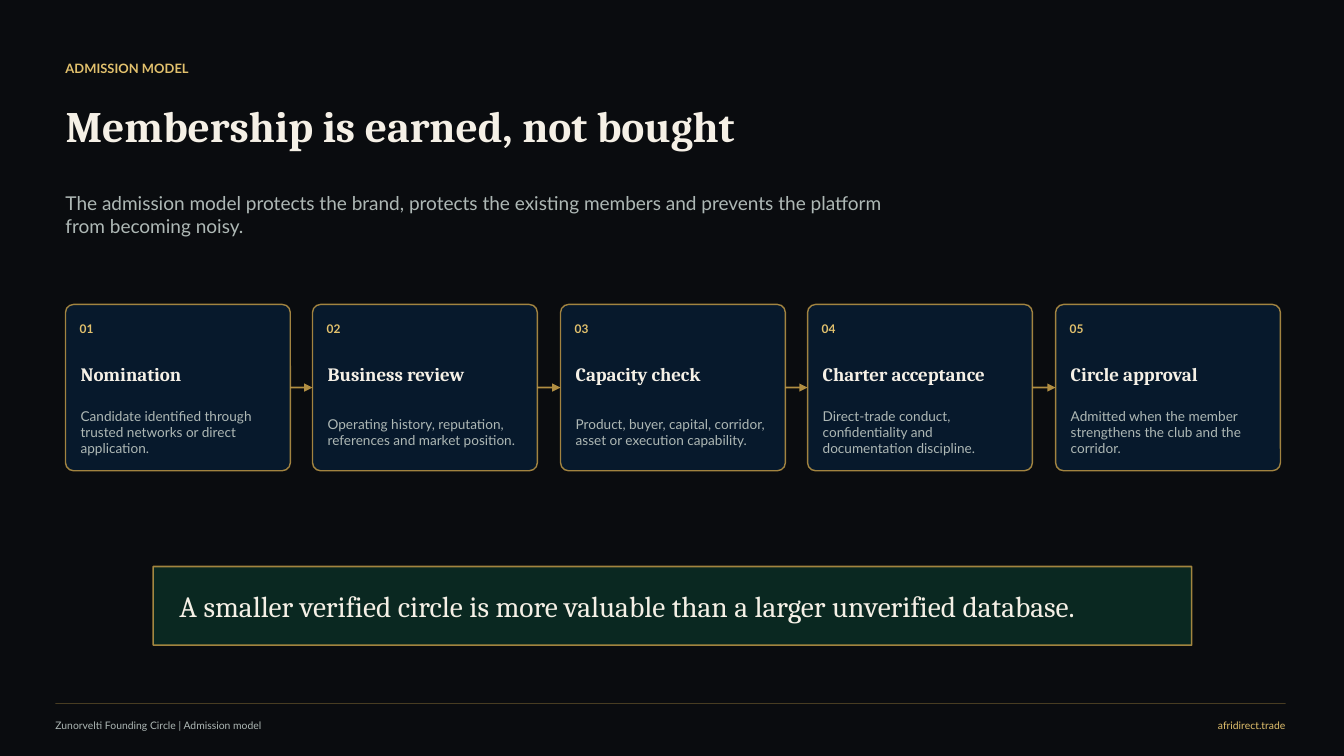
"""Build the admission model slide: five linked steps and a closing statement."""
from dataclasses import dataclass

from lxml import etree
from pptx import Presentation
from pptx.dml.color import RGBColor
from pptx.enum.shapes import MSO_CONNECTOR, MSO_SHAPE
from pptx.enum.text import MSO_ANCHOR, MSO_AUTO_SIZE, PP_ALIGN
from pptx.oxml.ns import qn
from pptx.shapes.autoshape import Shape
from pptx.shapes.connector import Connector
from pptx.slide import Slide
from pptx.util import Pt

EMU_PER_PX = 9144
TITLE_ONLY = 5
STRAIGHT = MSO_CONNECTOR.STRAIGHT
RECTANGLE, ROUNDED = MSO_SHAPE.RECTANGLE, MSO_SHAPE.ROUNDED_RECTANGLE
TOP, MIDDLE = MSO_ANCHOR.TOP, MSO_ANCHOR.MIDDLE
LEFT, RIGHT = PP_ALIGN.LEFT, PP_ALIGN.RIGHT
LEFT_SIDE, RIGHT_SIDE = 1, 3
SERIF, SANS = "Cambria", "Lato"
COLORS = {
    "night": "0A0C0F",
    "navy": "071A2D",
    "forest": "0B2A22",
    "gold": "C9A14A",
    "bright_gold": "E2C16D",
    "ivory": "F5F0E6",
    "mist": "AEB8B5",
}
CARD_LEFT, CARD_TOP, CARD_WIDTH, CARD_HEIGHT = 65, 302, 223, 165
LAST_CARD_OFFSET = 982


@dataclass(frozen=True)
class Box:
    """A rectangle in px."""
    left: int
    top: int
    width: int
    height: int

    def emu(self) -> tuple[int, int, int, int]:
        """Return the four lengths in EMU."""
        return tuple(v * EMU_PER_PX for v in (self.left, self.top, self.width, self.height))


@dataclass(frozen=True)
class Step:
    """One stage of admission."""
    heading: str
    detail: str


STEPS = [
    Step("Nomination", "Candidate identified through trusted networks or direct application."),
    Step("Business review", "Operating history, reputation, references and market position."),
    Step("Capacity check", "Product, buyer, capital, corridor, asset or execution capability."),
    Step("Charter acceptance", "Direct-trade conduct, confidentiality and documentation discipline."),
    Step("Circle approval", "Admitted when the member strengthens the club and the corridor."),
]


def rgb(color: str) -> RGBColor:
    """Look up a named colour."""
    return RGBColor.from_string(COLORS[color])


def set_opacity(fill_parent: etree._Element, percent: int) -> None:
    """Set the opacity of the solid fill directly under an element."""
    color = fill_parent.find(f"{qn('a:solidFill')}/{qn('a:srgbClr')}")
    etree.SubElement(color, qn("a:alpha"), val=str(percent * 1000))


def style_line(shape: Shape | Connector, width: float, opacity: int) -> None:
    """Give a shape or connector a translucent gold line."""
    shape.line.width = Pt(width)
    shape.line.fill.solid()
    shape.line.fill.fore_color.rgb = rgb("gold")
    set_opacity(shape.element.spPr.find(qn("a:ln")), opacity)


def write(slide: Slide, text: str, box: Box, *, size: float, color: str, font: str = SANS,
          bold: bool = False, align: PP_ALIGN = LEFT, anchor: MSO_ANCHOR = MIDDLE,
          holder: Shape | None = None) -> None:
    """Write formatted text in a new text box or in the given placeholder."""
    holder = holder or slide.shapes.add_textbox(*box.emu())
    holder.left, holder.top, holder.width, holder.height = box.emu()
    frame = holder.text_frame
    frame.word_wrap = True
    frame.auto_size = MSO_AUTO_SIZE.NONE
    frame.vertical_anchor = anchor
    frame.margin_left = frame.margin_right = frame.margin_top = frame.margin_bottom = 0
    paragraph = frame.paragraphs[0]
    paragraph.alignment = align
    run = paragraph.add_run()
    run.text = text
    run.font.name = font
    run.font.size = Pt(size)
    run.font.bold = bold
    run.font.color.rgb = rgb(color)


def add_panel(slide: Slide, box: Box, kind: MSO_SHAPE, *, color: str, opacity: int,
              line_width: float) -> Shape:
    """Add a filled panel with a gold outline."""
    panel = slide.shapes.add_shape(kind, *box.emu())
    panel.shadow.inherit = False
    panel.fill.solid()
    panel.fill.fore_color.rgb = rgb(color)
    set_opacity(panel.element.spPr, opacity)
    style_line(panel, line_width, 80)
    return panel


def add_line(slide: Slide, start: tuple[int, int], end: tuple[int, int], *, width: float,
             opacity: int) -> Connector:
    """Add a straight gold line between two points in px."""
    line = slide.shapes.add_connector(STRAIGHT, *(v * EMU_PER_PX for v in start + end))
    style_line(line, width, opacity)
    etree.SubElement(line.element.spPr, qn("a:effectLst"))
    return line


def add_arrow(slide: Slide, source: Shape, target: Shape) -> None:
    """Join two neighbouring cards with an arrow."""
    arrow = add_line(slide, (0, 0), (0, 0), width=1.2, opacity=88)
    arrow.begin_connect(source, RIGHT_SIDE)
    arrow.end_connect(target, LEFT_SIDE)
    etree.SubElement(arrow.element.spPr.find(qn("a:ln")), qn("a:tailEnd"), type="triangle")


def add_step(slide: Slide, index: int, step: Step) -> Shape:
    """Add the card of one step and return its panel."""
    left = CARD_LEFT + index * LAST_CARD_OFFSET // (len(STEPS) - 1)
    card = add_panel(slide, Box(left, CARD_TOP, CARD_WIDTH, CARD_HEIGHT), ROUNDED,
                     color="navy", opacity=98, line_width=1)
    card.adjustments[0] = 0.048
    write(slide, f"{index + 1:02}", Box(left + 14, CARD_TOP + 12, 42, 25),
          size=8.5, color="bright_gold", bold=True)
    write(slide, step.heading, Box(left + 15, CARD_TOP + 45, 193, 48),
          size=13.5, color="ivory", font=SERIF, bold=True)
    write(slide, step.detail, Box(left + 15, CARD_TOP + 99, 193, 55), size=9.7, color="mist")
    return card


def main() -> None:
    """Build and save the slide."""
    deck = Presentation()
    deck.slide_width, deck.slide_height = 1333 * EMU_PER_PX, 750 * EMU_PER_PX
    slide = deck.slides.add_slide(deck.slide_layouts[TITLE_ONLY])
    slide.background.fill.solid()
    slide.background.fill.fore_color.rgb = rgb("night")

    write(slide, "ADMISSION MODEL", Box(65, 55, 820, 25),
          size=9.2, color="bright_gold", bold=True)
    write(slide, "Membership is earned, not bought", Box(65, 88, 820, 72),
          size=31, color="ivory", font=SERIF, bold=True, holder=slide.shapes.title)
    write(slide, "The admission model protects the brand, protects the existing members "
          "and prevents the platform from becoming noisy.", Box(65, 190, 820, 52),
          size=13.6, color="mist", anchor=TOP)

    cards = [add_step(slide, index, step) for index, step in enumerate(STEPS)]
    for source, target in zip(cards, cards[1:]):
        add_arrow(slide, source, target)

    add_panel(slide, Box(152, 562, 1030, 78), RECTANGLE,
              color="forest", opacity=95, line_width=1.1)
    write(slide, "A smaller verified circle is more valuable than a larger unverified database.",
          Box(178, 584, 978, 34), size=21, color="ivory", font=SERIF)

    write(slide, "Zunorvelti Founding Circle | Admission model", Box(55, 712, 560, 16),
          size=7.4, color="mist")
    write(slide, "afridirect.trade", Box(1030, 712, 245, 16),
          size=7.4, color="bright_gold", align=RIGHT)
    add_line(slide, (55, 698), (1275, 698), width=0.5, opacity=32)
    deck.save("out.pptx")


if __name__ == "__main__":
    main()
